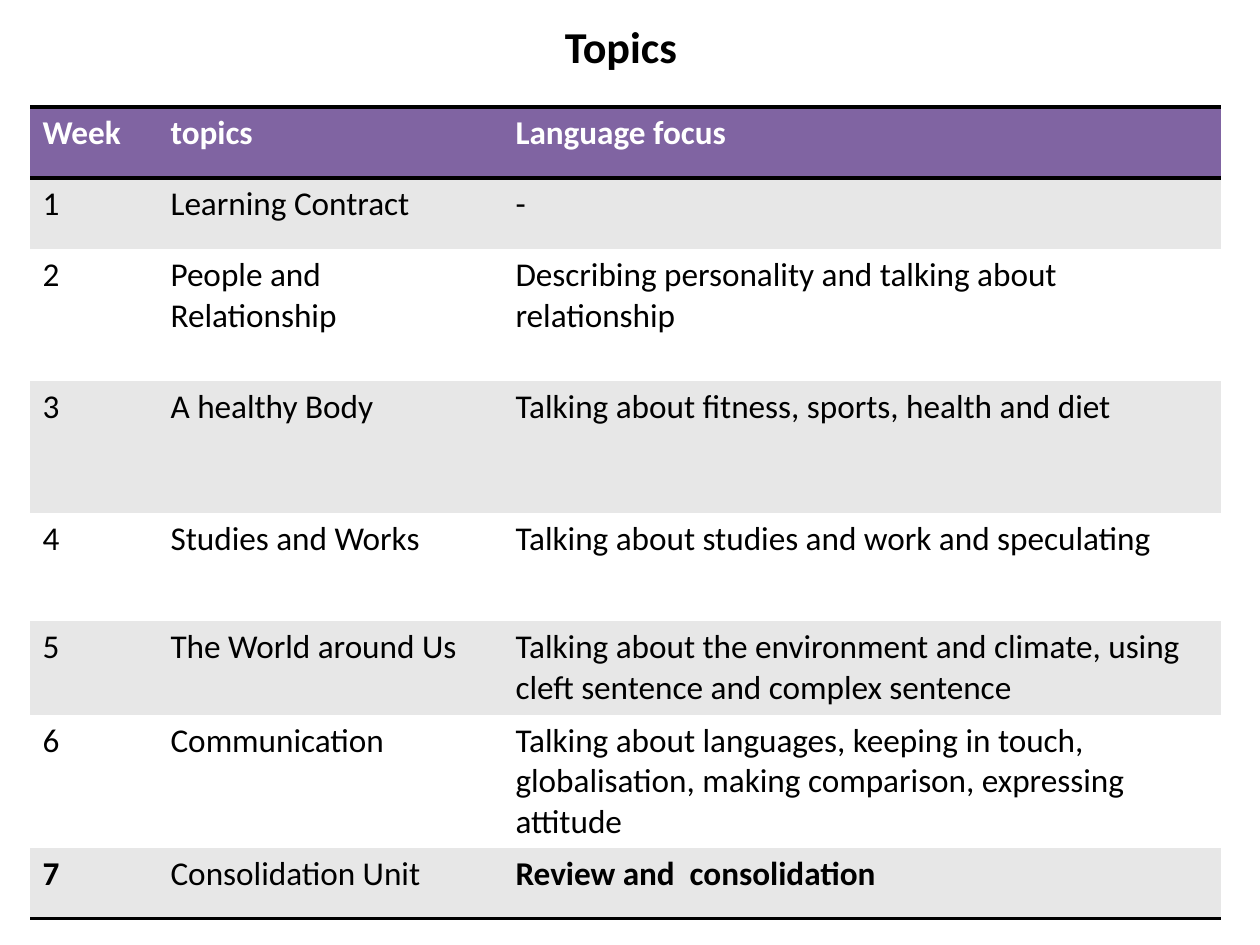
import lxml.etree
import pptx
import pptx.dml.color
import pptx.enum.text
import pptx.oxml.ns
import pptx.util

PX = 914400 // 126
THEME = {
    "font": "Calibri",
    "title_size": 25.2,
    "table_size": 19,
    "ink": "000000",
    "header_ink": "FFFFFF",
    "header_fill": "8064A2",
    "band_fills": ["FFFFFF", "E7E7E7"],
    "rule_width": 2,
    "plain_table_style": "{2D5ABB26-0587-4C30-8999-92F81FD0307C}",
}


def write_text(para, text, size, color, bold):
    span = para.add_run()
    span.text = text
    font_format = {"name": THEME["font"], "size": pptx.util.Pt(size), "bold": bold}
    for name, value in font_format.items():
        setattr(span.font, name, value)
    span.font.color.rgb = pptx.dml.color.RGBColor.from_string(color)


def add_rule(cell, side):
    qn = pptx.oxml.ns.qn
    properties = cell._tc.get_or_add_tcPr()
    width = str(pptx.util.Pt(THEME["rule_width"]))
    line = lxml.etree.SubElement(properties, qn(f"a:{side}"), w=width)
    fill = lxml.etree.SubElement(line, qn("a:solidFill"))
    lxml.etree.SubElement(fill, qn("a:srgbClr"), val=THEME["ink"])


deck = pptx.Presentation()
deck.slide_width = 1260 * PX
deck.slide_height = 945 * PX
page = deck.slides.add_slide(deck.slide_layouts[6])

title = page.shapes.add_textbox(444 * PX, 10 * PX, 364 * PX, 69 * PX)
frame_format = {
    "word_wrap": True,
    "vertical_anchor": pptx.enum.text.MSO_ANCHOR.BOTTOM,
}
for name, value in frame_format.items():
    setattr(title.text_frame, name, value)
title_para = title.text_frame.paragraphs[0]
title_para.alignment = pptx.enum.text.PP_ALIGN.CENTER
write_text(title_para, "Topics ", THEME["title_size"], THEME["ink"], True)

rows = [
    (71, ["Week", "topics", "Language focus"]),
    (71, ["1", "Learning Contract", "-"]),
    (132, ["2", "People and Relationship",
           "Describing personality and talking about relationship"]),
    (132, ["3", "A healthy Body", "Talking about fitness, sports, health and diet"]),
    (108, ["4", "Studies and Works", "Talking about studies and work and speculating"]),
    (94, ["5", "The World around Us",
          "Talking about the environment and climate, using cleft sentence "
          "and complex sentence"]),
    (133, ["6", "Communication",
           "Talking about languages, keeping in touch, globalisation, "
           "making comparison, expressing attitude"]),
    (71, ["7", "Consolidation Unit", "Review and  consolidation"]),
]
column_widths = [128, 345, 718]
last_row = len(rows) - 1
bold_cells = {(last_row, 0), (last_row, 2)}

table_frame = page.shapes.add_table(
    len(rows), len(column_widths), 30 * PX, 107 * PX,
    sum(column_widths) * PX, sum(height for height, texts in rows) * PX)
table = table_frame.table
table._tbl.tblPr.find(pptx.oxml.ns.qn("a:tableStyleId")).text = THEME["plain_table_style"]
for column, width in zip(table.columns, column_widths):
    column.width = width * PX

for row_index, (height, texts) in enumerate(rows):
    table.rows[row_index].height = height * PX
    header = row_index == 0
    fill_color = THEME["header_fill"] if header else THEME["band_fills"][row_index % 2]
    ink = THEME["header_ink"] if header else THEME["ink"]
    for column_index, text in enumerate(texts):
        cell = table.cell(row_index, column_index)
        if header:
            add_rule(cell, "lnT")
        if row_index in (0, last_row):
            add_rule(cell, "lnB")
        cell.fill.solid()
        cell.fill.fore_color.rgb = pptx.dml.color.RGBColor.from_string(fill_color)
        bold = header or (row_index, column_index) in bold_cells
        write_text(cell.text_frame.paragraphs[0], text, THEME["table_size"], ink, bold)

deck.save("out.pptx")
